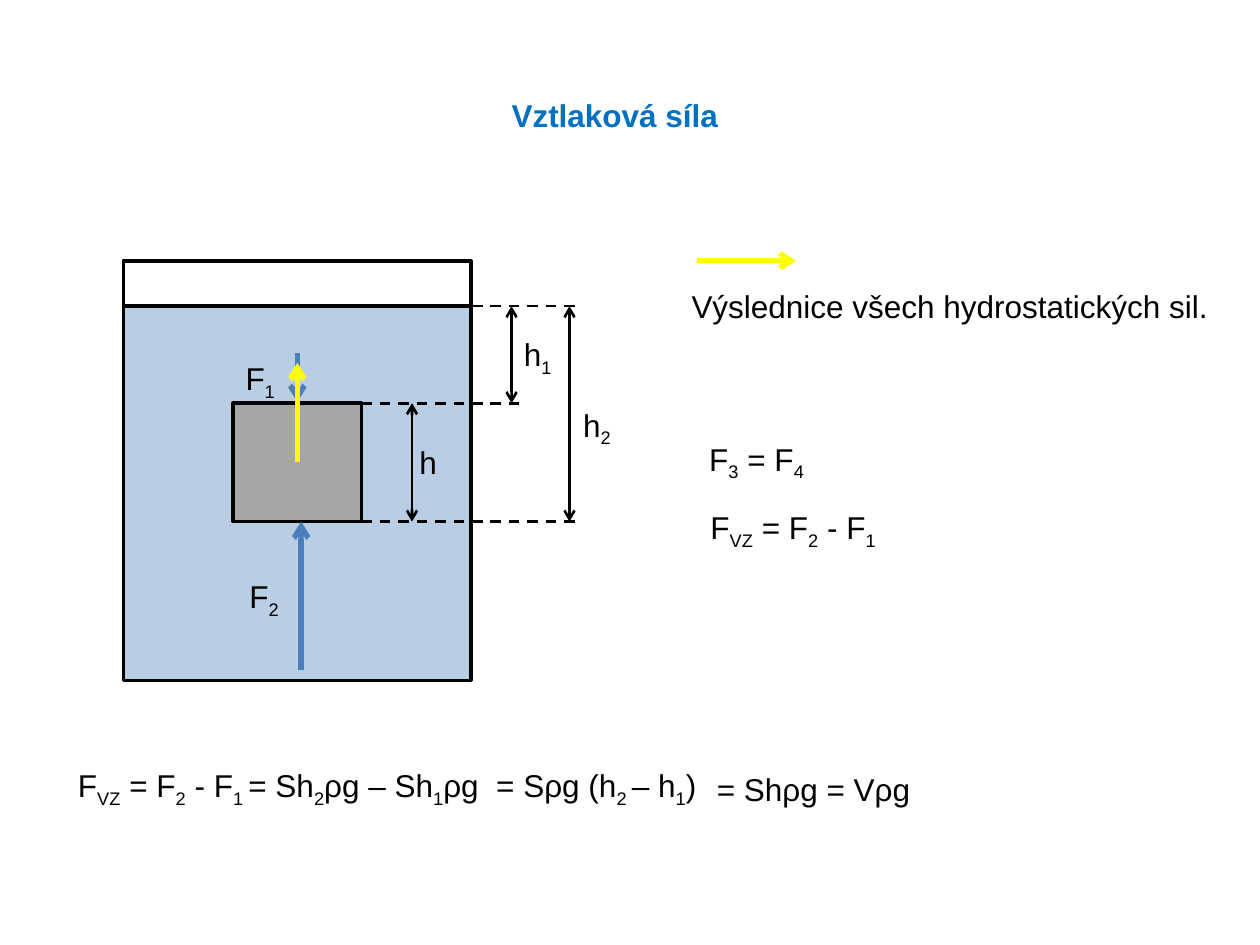
"""Build the buoyant force slide on a grid of 100 columns by 75 rows."""
from typing import NamedTuple

import lxml.etree
import pptx
import pptx.dml.color
import pptx.enum.dml
import pptx.enum.shapes
import pptx.enum.text
import pptx.oxml.ns
import pptx.util

COLORS = {
    "title": "0070C0",
    "ink": "000000",
    "water": "B9CDE5",
    "block": "A6A6A6",
    "force": "4B7EBC",
    "resultant": "FFFF00",
}
CELL = 0.1
LABEL_ROWS = 4
TANK_LEFT, TANK_COLS, TANK_TOP = 9.8, 27.6, 20.7
SURFACE = 24.3
BLOCK_LEFT, BLOCK_RIGHT, BLOCK_TOP, BLOCK_BOTTOM = 18.5, 28.7, 32, 41.4


class Box(NamedTuple):
    left: float
    top: float
    cols: float
    rows: float
    fill: str = ""


class Line(NamedTuple):
    x1: float
    y1: float
    x2: float
    y2: float
    color: str = "ink"
    width: float = 1.5
    ends: tuple[str, ...] = ()
    dashed: bool = False


class Label(NamedTuple):
    """Text in which every second part between bars is a subscript."""
    left: float
    top: float
    cols: float
    text: str


BOXES = [
    Box(TANK_LEFT, TANK_TOP, TANK_COLS, 29.9),
    Box(TANK_LEFT, SURFACE, TANK_COLS, 29.7, "water"),
    Box(BLOCK_LEFT, BLOCK_TOP, BLOCK_RIGHT - BLOCK_LEFT, BLOCK_BOTTOM - BLOCK_TOP, "block"),
]
ONE_WAY, TWO_WAY = ("tailEnd",), ("headEnd", "tailEnd")
LINES = [
    Line(23.9, 53.2, 23.9, BLOCK_BOTTOM, "force", 3, ONE_WAY),
    Line(23.6, 28, 23.6, 31.9, "force", 3, ONE_WAY),
    Line(55.3, TANK_TOP, 63.2, TANK_TOP, "resultant", 3, ONE_WAY),
    Line(23.6, 36.7, 23.6, 28.8, "resultant", 3, ONE_WAY),
    Line(BLOCK_RIGHT, BLOCK_TOP, 41.7, BLOCK_TOP, dashed=True),
    Line(BLOCK_RIGHT, BLOCK_BOTTOM, 46.1, BLOCK_BOTTOM, dashed=True),
    Line(BLOCK_RIGHT, SURFACE, 45.7, SURFACE, dashed=True),
    Line(40.6, SURFACE, 40.6, BLOCK_TOP, ends=TWO_WAY),
    Line(45.2, SURFACE, 45.2, BLOCK_BOTTOM, ends=TWO_WAY),
    Line(32.7, BLOCK_TOP, 32.7, BLOCK_BOTTOM, ends=TWO_WAY),
]
LABELS = [
    Label(53.9, 22.3, 43.4, "Výslednice všech hydrostatických sil."),
    Label(18.8, 45.3, 4.5, "F|2"),
    Label(18.5, 28, 4.5, "F|1"),
    Label(55.3, 34.4, 9.8, "F|3| = F|4"),
    Label(55.4, 39.8, 15.8, "F|VZ| = F|2| - F|1"),
    Label(5.2, 60.3, 54.1,
          "F|VZ| = F|2| - F|1 |= Sh|2|ρg – Sh|1|ρg  = Sρg (h|2 |– h|1|)"),
    Label(45.3, 31.7, 4.4, "h|2"),
    Label(40.6, 26.1, 4.4, "h|1"),
    Label(32.3, 34.7, 3.4, "h"),
    Label(55.9, 60.6, 17.5, "= Shρg = Vρg"),
]


def grid(*cells: float) -> list[pptx.util.Length]:
    return [pptx.util.Inches(c * CELL) for c in cells]


def rgb(name: str) -> pptx.dml.color.RGBColor:
    return pptx.dml.color.RGBColor.from_string(COLORS[name])


def draw_box(s, box: Box) -> None:
    sp = s.shapes.add_shape(pptx.enum.shapes.MSO_SHAPE.RECTANGLE, *grid(*box[:4]))
    sp.shadow.inherit = False
    if box.fill:
        sp.fill.solid()
        sp.fill.fore_color.rgb = rgb(box.fill)
    else:
        sp.fill.background()
    sp.line.color.rgb = rgb("ink")
    sp.line.width = pptx.util.Pt(2)


def draw_line(s, line: Line) -> None:
    sp = s.shapes.add_connector(pptx.enum.shapes.MSO_CONNECTOR.STRAIGHT, *grid(*line[:4]))
    sp.line.color.rgb = rgb(line.color)
    sp.line.width = pptx.util.Pt(line.width)
    if line.dashed:
        sp.line.dash_style = pptx.enum.dml.MSO_LINE.DASH
    qn = pptx.oxml.ns.qn
    props = sp.line._get_or_add_ln()
    for end in line.ends:
        lxml.etree.SubElement(props, qn(f"a:{end}")).set("type", "arrow")
    lxml.etree.SubElement(props.getparent(), qn("a:effectLst"))


def draw_label(s, label: Label, color: str = "ink", title: bool = False) -> None:
    sp = s.shapes.add_textbox(*grid(label.left, label.top, label.cols, LABEL_ROWS))
    tf = sp.text_frame
    tf.word_wrap = title
    tf.auto_size = pptx.enum.text.MSO_AUTO_SIZE.SHAPE_TO_FIT_TEXT
    p = tf.paragraphs[0]
    if title:
        p.alignment = pptx.enum.text.PP_ALIGN.CENTER
    for i, part in enumerate(label.text.split("|")):
        r = p.add_run()
        r.text = part
        r.font.name = "Arial"
        r.font.size = pptx.util.Pt(18)
        r.font.bold = title
        r.font.color.rgb = rgb(color)
        if i % 2:
            r._r.get_or_add_rPr().set("baseline", "-25000")


def main() -> None:
    prs = pptx.Presentation()
    prs.slide_width, prs.slide_height = grid(100, 75)
    s = prs.slides.add_slide(prs.slide_layouts[6])
    draw_label(s, Label(30.3, 7.1, 37, "Vztlaková síla"), "title", title=True)
    for box in BOXES:
        draw_box(s, box)
    for line in LINES:
        draw_line(s, line)
    for label in LABELS:
        draw_label(s, label)
    prs.save("out.pptx")


if __name__ == "__main__":
    main()
